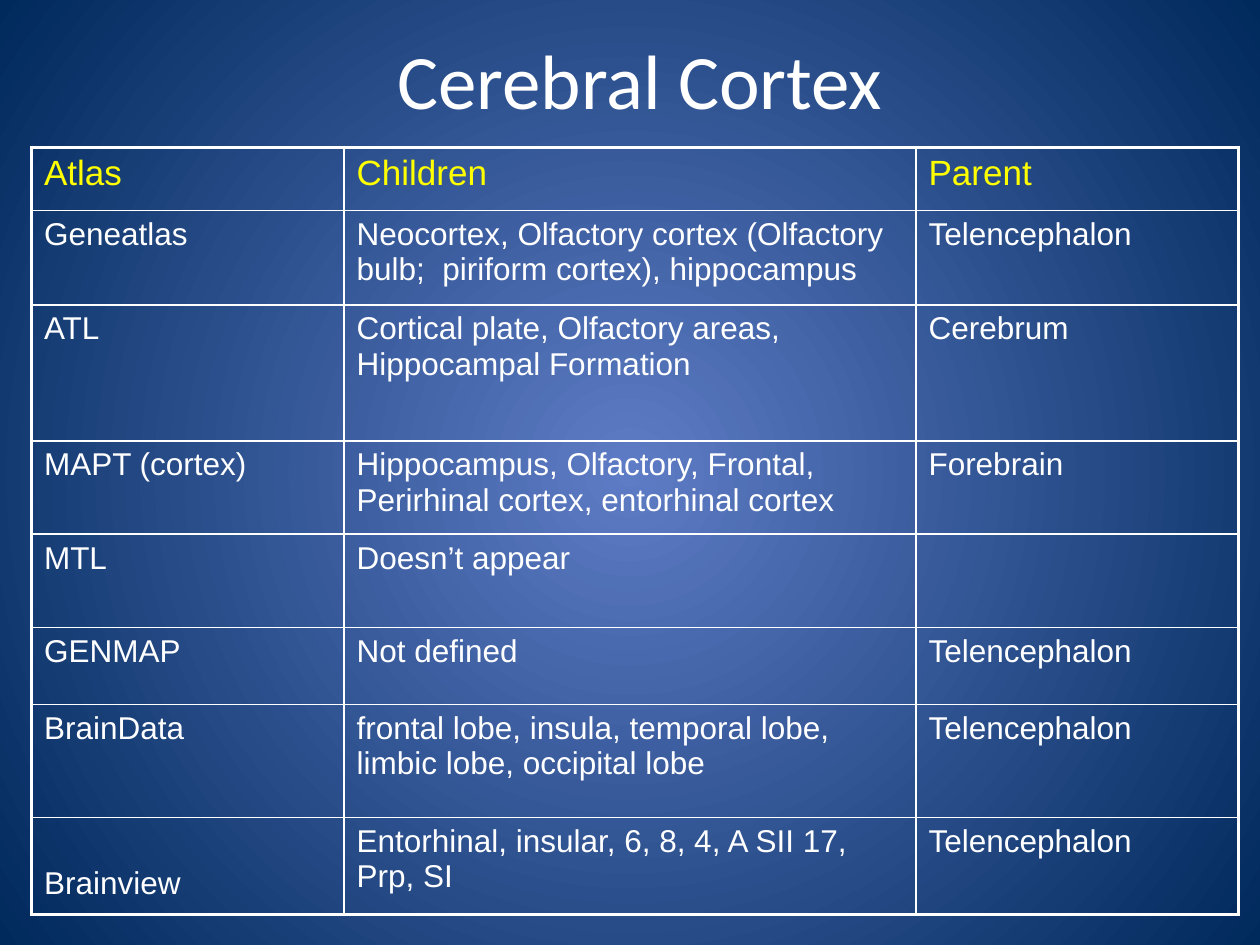
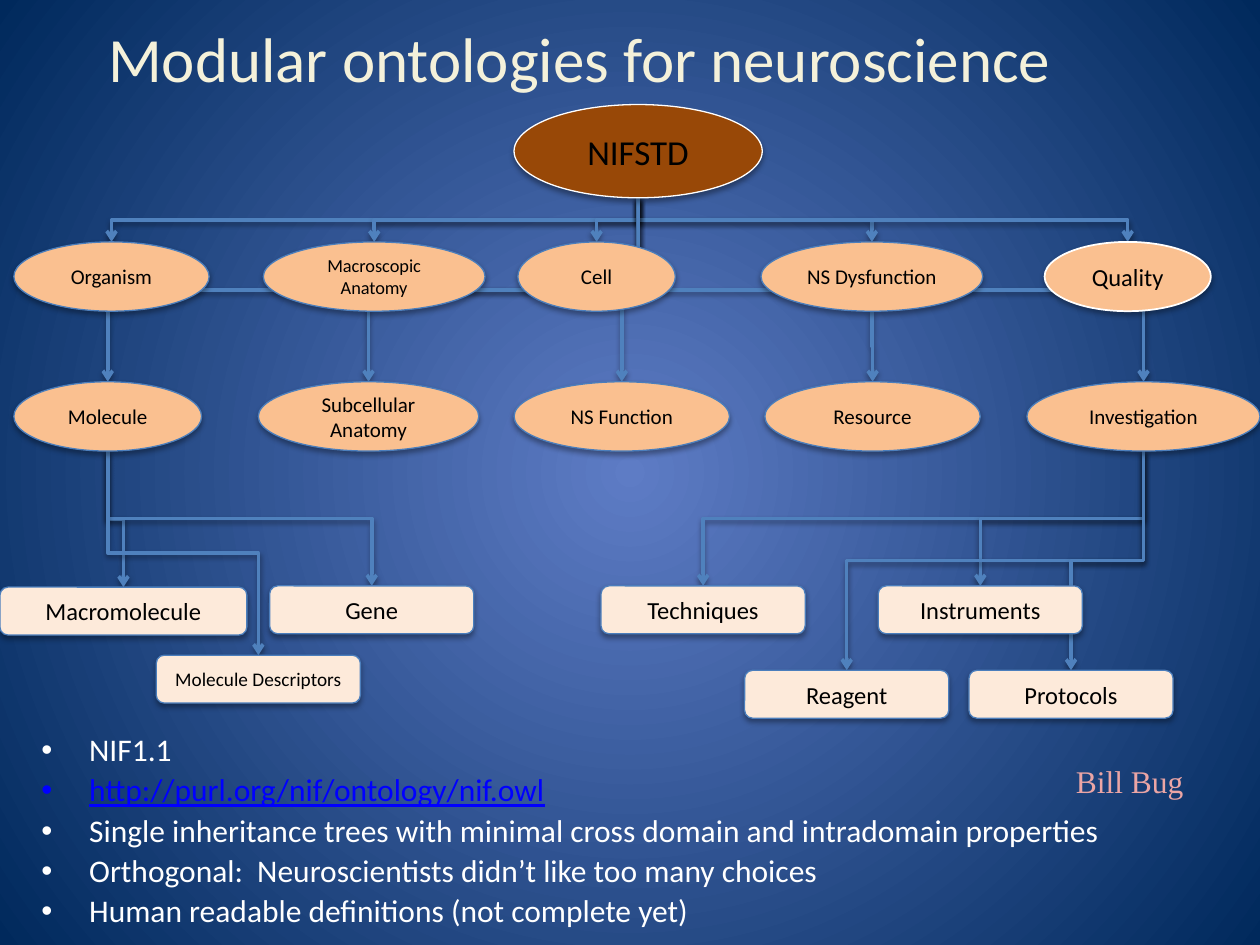
"""Build two slides on brain atlas terms and modular ontologies."""
from dataclasses import dataclass

import pptx
import pptx.dml.color
import pptx.enum.shapes
import pptx.enum.text
import pptx.oxml
import pptx.oxml.ns
import pptx.presentation
import pptx.shapes.autoshape
import pptx.slide
import pptx.table
import pptx.text.text
import pptx.util

Inches = pptx.util.Inches
Pt = pptx.util.Pt
qn = pptx.oxml.ns.qn
FORM = pptx.enum.shapes.MSO_SHAPE
ALIGN = pptx.enum.text.PP_ALIGN
ANCHOR = pptx.enum.text.MSO_ANCHOR
NS = pptx.oxml.ns.nsdecls("a")

COLORS = {
    "glow": "5E7CC5", "navy": "00295C", "white": "FFFFFF", "cream": "F4F1DA",
    "yellow": "FFFF00", "black": "000000", "brown": "984807", "peach": "FAC090",
    "pale": "FDEADA", "edge": "4B7EBC", "line": "4F81BD", "pink": "EBA5A5",
    "blue": "0000FF",
}


@dataclass(frozen=True)
class Font:
    size: float
    color: str
    face: str = "Calibri"
    under: bool = False


@dataclass(frozen=True)
class Box:
    left: float
    top: float
    width: float
    height: float

    def lengths(self) -> list[int]:
        return [Inches(v) for v in (self.left, self.top, self.width, self.height)]


@dataclass(frozen=True)
class Kind:
    form: int
    fill: str
    height: float
    edge: str = "edge"


@dataclass(frozen=True)
class Node:
    text: str
    left: float
    top: float
    width: float
    kind: Kind
    size: float = 12
    edge: str = ""
    weight: float = 0.75

    @property
    def mid(self) -> float:
        return self.left + self.width / 2

    @property
    def foot(self) -> float:
        return self.top + self.kind.height


ROOT = Kind(FORM.OVAL, "brown", 0.74, "white")
OVAL = Kind(FORM.OVAL, "peach", 0.55)
LEAF = Kind(FORM.ROUNDED_RECTANGLE, "pale", 0.38)
ROW_A, ROW_B, ROW_C, ROW_D = 1.92, 3.03, 4.65, 5.32

NODES = [
    Node("NIFSTD", 4.08, 0.83, 1.97, ROOT, 20),
    Node("Organism", 0.11, ROW_A, 1.55, OVAL),
    Node("Macroscopic\nAnatomy", 2.09, ROW_A, 1.76, OVAL, 10.5),
    Node("Cell", 4.11, ROW_A, 1.25, OVAL),
    Node("NS Dysfunction", 6.04, ROW_A, 1.76, OVAL),
    Node("Quality", 8.29, ROW_A, 1.32, OVAL, 14, "white", 1),
    Node("Molecule", 0.11, ROW_B, 1.49, OVAL),
    Node("Subcellular Anatomy", 2.05, ROW_B, 1.75, OVAL),
    Node("NS Function", 4.08, ROW_B, 1.71, OVAL),
    Node("Resource", 6.07, ROW_B, 1.71, OVAL),
    Node("Investigation", 8.15, ROW_B, 1.85, OVAL),
    Node("Macromolecule", 0, 4.66, 1.96, LEAF, 14),
    Node("Gene", 2.14, ROW_C, 1.62, LEAF, 14),
    Node("Molecule Descriptors", 1.24, 5.2, 1.62, LEAF, 11),
    Node("Techniques", 4.77, ROW_C, 1.62, LEAF, 14),
    Node("Instruments", 6.97, ROW_C, 1.62, LEAF, 14),
    Node("Reagent", 5.91, ROW_D, 1.62, LEAF, 14),
    Node("Protocols", 7.69, ROW_D, 1.62, LEAF, 14),
]

LINKS = {
    "NIFSTD": ["Organism", "Macroscopic\nAnatomy", "Cell", "NS Dysfunction", "Quality",
               "Molecule", "Subcellular Anatomy", "NS Function", "Investigation"],
    "NS Dysfunction": ["Resource"],
    "Molecule": ["Macromolecule", "Gene", "Molecule Descriptors"],
    "Investigation": ["Techniques", "Instruments", "Reagent", "Protocols"],
}

COLS = [2.48, 4.54, 2.56]
HEIGHTS = [0.5, 0.75, 1.08, 0.74, 0.74, 0.61, 0.9, 0.77]
ROWS = [
    ("Atlas", "Children", "Parent"),
    ("Geneatlas", "Neocortex, Olfactory cortex (Olfactory bulb;  piriform cortex), hippocampus",
     "Telencephalon"),
    ("ATL", "Cortical plate, Olfactory areas, Hippocampal Formation", "Cerebrum"),
    ("MAPT (cortex)", "Hippocampus, Olfactory, Frontal, Perirhinal cortex, entorhinal cortex",
     "Forebrain"),
    ("MTL", "Doesn’t appear", ""),
    ("GENMAP", "Not defined", "Telencephalon"),
    ("BrainData", "frontal lobe, insula, temporal lobe, limbic lobe, occipital lobe",
     "Telencephalon"),
    ("Brainview", "Entorhinal, insular, 6, 8, 4, A SII 17, Prp, SI", "Telencephalon"),
]

PLAIN = Font(18, "white")
POINTS = [
    ("NIF1.1", PLAIN),
    ("http://purl.org/nif/ontology/nif.owl", Font(18, "blue", under=True)),
    ("Single inheritance trees with minimal cross domain and intradomain properties", PLAIN),
    ("Orthogonal:  Neuroscientists didn’t like too many choices", PLAIN),
    ("Human readable definitions (not complete yet)", PLAIN),
]


def rgb(name: str) -> pptx.dml.color.RGBColor:
    return pptx.dml.color.RGBColor.from_string(COLORS[name])


def parse(tag: str, attrs: str = "", inner: str = ""):
    return pptx.oxml.parse_xml(f"<a:{tag} {NS} {attrs}>{inner}</a:{tag}>")


def add_run(para: pptx.text.text._Paragraph, text: str, font: Font) -> None:
    run = para.add_run()
    run.text = text
    run.font.size = Pt(font.size)
    run.font.name = font.face
    run.font.underline = font.under
    run.font.color.rgb = rgb(font.color)


def next_para(frame: pptx.text.text.TextFrame, first: bool) -> pptx.text.text._Paragraph:
    return frame.paragraphs[0] if first else frame.add_paragraph()


def space_out(para: pptx.text.text._Paragraph) -> None:
    props = para._p.get_or_add_pPr()
    props.append(parse("spcBef", inner='<a:spcPct val="20000"/>'))


def add_text(slide: pptx.slide.Slide, box: Box) -> pptx.text.text.TextFrame:
    frame = slide.shapes.add_textbox(*box.lengths()).text_frame
    frame.word_wrap = True
    return frame


def add_title(slide: pptx.slide.Slide, text: str, box: Box, font: Font) -> None:
    frame = add_text(slide, box)
    frame.vertical_anchor = ANCHOR.MIDDLE
    para = frame.paragraphs[0]
    para.alignment = ALIGN.CENTER
    add_run(para, text, font)


def cast_shade(shape, drop: int, alpha: int) -> None:
    props = shape.element.spPr
    for old in props.findall(qn("a:effectLst")):
        props.remove(old)
    props.append(parse("effectLst", inner=(
        f'<a:outerShdw blurRad="40000" dist="{drop}" dir="5400000" rotWithShape="0">'
        f'<a:srgbClr val="{COLORS["black"]}"><a:alpha val="{alpha}000"/></a:srgbClr>'
        '</a:outerShdw>')))


def add_node(slide: pptx.slide.Slide, node: Node) -> None:
    box = Box(node.left, node.top, node.width, node.kind.height)
    shape = slide.shapes.add_shape(node.kind.form, *box.lengths())
    shape.shadow.inherit = False
    shape.fill.solid()
    shape.fill.fore_color.rgb = rgb(node.kind.fill)
    shape.line.color.rgb = rgb(node.edge or node.kind.edge)
    shape.line.width = Pt(node.weight)
    cast_shade(shape, 23000, 35)
    frame = shape.text_frame
    frame.word_wrap = True
    frame.vertical_anchor = ANCHOR.MIDDLE
    for i, text in enumerate(node.text.split("\n")):
        para = next_para(frame, i == 0)
        para.alignment = ALIGN.CENTER
        add_run(para, text, Font(node.size, "black"))


def add_link(slide: pptx.slide.Slide, start: Node, end: Node) -> None:
    mid_x, mid_y = (start.mid + end.mid) / 2, (start.foot + end.top) / 2
    half = (end.top - start.foot) / 2
    rise = abs(end.mid - start.mid) / 2
    right = end.mid > start.mid
    side = half if right else -half
    line = slide.shapes.add_connector(
        pptx.enum.shapes.MSO_CONNECTOR.ELBOW,
        Inches(mid_x + side), Inches(mid_y - rise),
        Inches(mid_x - side), Inches(mid_y + rise))
    turn = 270 if right else 90
    line.element.spPr.find(qn("a:xfrm")).set("rot", str(turn * 60000))
    line.line.color.rgb = rgb("line")
    line.line.width = Pt(2)
    line.element.spPr.find(qn("a:ln")).append(parse("tailEnd", 'type="arrow"'))
    cast_shade(line, 20000, 38)


def add_edges(cell: pptx.table._Cell, outer: dict[str, bool]) -> None:
    props = cell._tc.get_or_add_tcPr()
    for side, thick in outer.items():
        width = Pt(2.25 if thick else 1)
        props.append(parse(f"ln{side}", f'w="{int(width)}"', (
            f'<a:solidFill><a:srgbClr val="{COLORS["white"]}"/></a:solidFill>')))


def add_grid(slide: pptx.slide.Slide) -> None:
    box = Box(0.25, 1.17, sum(COLS), sum(HEIGHTS))
    last_r, last_c = len(ROWS) - 1, len(COLS) - 1
    grid = slide.shapes.add_table(len(ROWS), len(COLS), *box.lengths()).table
    grid.first_row = grid.horz_banding = False
    for col, width in zip(grid.columns, COLS):
        col.width = Inches(width)
    for r, texts in enumerate(ROWS):
        grid.rows[r].height = Inches(HEIGHTS[r])
        font = Font(18, "white", "Arial") if r else Font(20, "yellow", "Arial")
        for c, text in enumerate(texts):
            cell = grid.cell(r, c)
            add_edges(cell, {"L": c == 0, "R": c == last_c, "T": r == 0, "B": r == last_r})
            cell.fill.background()
            if text:
                para = cell.text_frame.paragraphs[0]
                space_out(para)
                add_run(para, text, font)
    grid.cell(last_r, 0).margin_top = Inches(0.38)


def add_points(slide: pptx.slide.Slide) -> None:
    frame = add_text(slide, Box(0.23, 5.78, 9.67, 1.47))
    for i, (text, font) in enumerate(POINTS):
        para = next_para(frame, i == 0)
        para.line_spacing = 0.9
        space_out(para)
        props = para._p.get_or_add_pPr()
        props.set("marL", str(Inches(0.38)))
        props.set("indent", str(Inches(-0.38)))
        props.append(parse("buFont", 'typeface="Arial"'))
        props.append(parse("buChar", 'char="•"'))
        add_run(para, text, font)


def set_back(deck: pptx.presentation.Presentation) -> None:
    master = deck.slide_master
    fill = master.background.fill
    fill.gradient()
    for stop, name, place in zip(fill.gradient_stops, ("glow", "navy"), (0, 1)):
        stop.color.rgb = rgb(name)
        stop.position = place
    grad = master.element.cSld.find(".//" + qn("a:gradFill"))
    grad.replace(grad.find(qn("a:lin")), parse(
        "path", 'path="circle"', '<a:fillToRect l="50000" t="50000" r="50000" b="50000"/>'))


def main() -> None:
    deck = pptx.Presentation()
    deck.slide_width, deck.slide_height = Inches(10), Inches(7.5)
    set_back(deck)
    blank = deck.slide_layouts[6]

    cortex = deck.slides.add_slide(blank)
    add_title(cortex, "Cerebral Cortex", Box(0.83, 0, 8.5, 1.25), Font(44, "white"))
    add_grid(cortex)

    tree = deck.slides.add_slide(blank)
    add_title(tree, "Modular ontologies for neuroscience",
              Box(0.1, -0.17, 9, 1.25), Font(36, "cream"))
    names = {node.text: node for node in NODES}
    for start, ends in LINKS.items():
        for end in ends:
            add_link(tree, names[start], names[end])
    for node in NODES:
        add_node(tree, node)
    credit = add_text(tree, Box(8.44, 6, 1.47, 0.4))
    add_run(credit.paragraphs[0], "Bill Bug", Font(18, "pink", "Times New Roman"))
    add_points(tree)
    deck.save("out.pptx")


if __name__ == "__main__":
    main()
